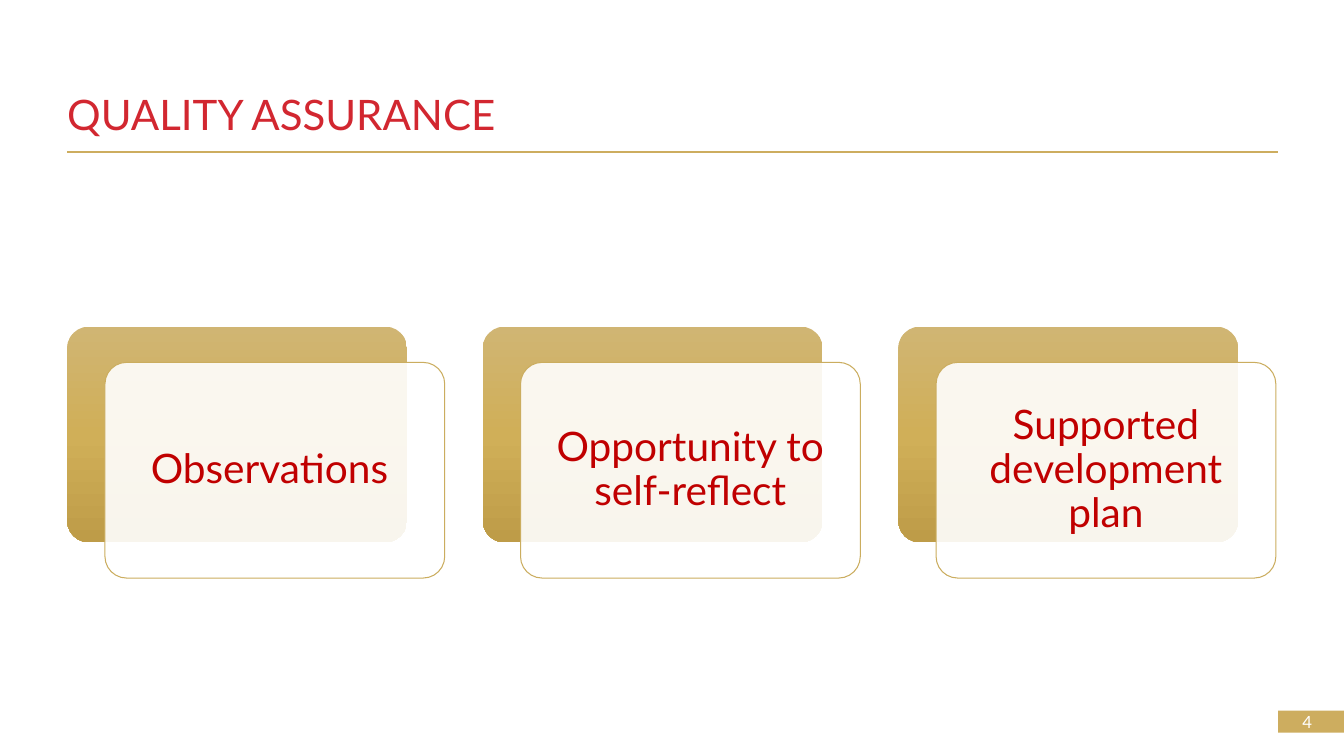
import copy

import pptx
import pptx.dml.color
import pptx.enum.shapes
import pptx.enum.text
import pptx.oxml
import pptx.oxml.ns
import pptx.util

RED = pptx.dml.color.RGBColor(0xD2, 0x27, 0x30)
DEEP_RED = pptx.dml.color.RGBColor(0xC0, 0x00, 0x00)
GOLD = pptx.dml.color.RGBColor(0xCD, 0xAD, 0x5F)
CARD_EDGE = pptx.dml.color.RGBColor(0xCB, 0xAD, 0x5F)
GOLD_LIGHT = pptx.dml.color.RGBColor(0xD0, 0xB5, 0x73)
GOLD_MIDDLE = pptx.dml.color.RGBColor(0xD0, 0xAF, 0x58)
GOLD_DARK = pptx.dml.color.RGBColor(0xBE, 0x9C, 0x48)
WHITE = pptx.dml.color.RGBColor(0xFF, 0xFF, 0xFF)

SHAPE = pptx.enum.shapes.MSO_SHAPE
ALIGN = pptx.enum.text.PP_ALIGN
ANCHOR = pptx.enum.text.MSO_ANCHOR

MARGIN = 5
RULE_END = 95.1
CARD_TOP = 43.2
CARD_SIZE = (25.28, 28.53)
CARD_PITCH = 30.92
FRONT_SHIFT = (2.81, 4.73)
TEXT_PADDING = (0.47, 0.83)
CARDS = ["Observations ", "Opportunity to self-reflect", "Supported development plan"]


def write_text(box, text, size, color, font="Lato", align=ALIGN.LEFT,
               anchor=ANCHOR.MIDDLE, spacing=1.0, insets=(0, 0, 0, 0)):
    frame = box.text_frame
    frame.word_wrap = True
    frame.vertical_anchor = anchor
    (frame.margin_left, frame.margin_top,
     frame.margin_right, frame.margin_bottom) = map(pptx.util.Inches, insets)
    para = frame.paragraphs[0]
    para.alignment = align
    para.line_spacing = spacing
    span = para.add_run()
    span.text = text
    span.font.name = font
    span.font.size = pptx.util.Pt(size)
    span.font.color.rgb = color


class GridPage:
    def __init__(self, deck, columns=100, rows=100):
        self.page = deck.slides.add_slide(deck.slide_layouts[6])
        self.column = deck.slide_width / columns
        self.row = deck.slide_height / rows

    def place(self, *lengths):
        units = (self.column, self.row) * 2
        return [round(length * unit) for length, unit in zip(lengths, units)]

    def rule(self, left, right, row):
        line = self.page.shapes.add_connector(
            pptx.enum.shapes.MSO_CONNECTOR.STRAIGHT, *self.place(left, row, right, row))
        line.line.color.rgb = GOLD
        line.line.width = pptx.util.Pt(1)
        line._element.spPr.append(pptx.oxml.parse_xml(
            f"<a:effectLst {pptx.oxml.ns.nsdecls('a')}/>"))

    def text(self, area, text, size, color, **style):
        box = self.page.shapes.add_textbox(*self.place(*area))
        write_text(box, text, size, color, **style)

    def shape(self, kind, area, color=None):
        box = self.page.shapes.add_shape(kind, *self.place(*area))
        box.shadow.inherit = False
        box.line.fill.background()
        if kind == SHAPE.ROUNDED_RECTANGLE:
            box.adjustments[0] = 0.1
        if color is not None:
            box.fill.solid()
            box.fill.fore_color.rgb = color
        return box

    def gradient_card(self, area):
        card = self.shape(SHAPE.ROUNDED_RECTANGLE, area)
        card.fill.gradient()
        card.fill.gradient_angle = 270
        stop_list = card._element.spPr.find(".//" + pptx.oxml.ns.qn("a:gsLst"))
        stop_list.insert(1, copy.deepcopy(stop_list[0]))
        colors = (GOLD_LIGHT, GOLD_MIDDLE, GOLD_DARK)
        for stop, color, position in zip(card.fill.gradient_stops, colors, (0, 0.5, 1)):
            stop.color.rgb = color
            stop.position = position

    def clear_card(self, area):
        card = self.shape(SHAPE.ROUNDED_RECTANGLE, area, WHITE)
        color = card._element.spPr.find(
            pptx.oxml.ns.qn("a:solidFill") + "/" + pptx.oxml.ns.qn("a:srgbClr"))
        color.append(pptx.oxml.parse_xml(
            f"<a:alpha {pptx.oxml.ns.nsdecls('a')} val='90000'/>"))
        card.line.color.rgb = CARD_EDGE
        card.line.width = pptx.util.Pt(0.75)

    def card(self, left, top, text):
        width, height = CARD_SIZE
        self.gradient_card((left, top, width, height))
        left, top = left + FRONT_SHIFT[0], top + FRONT_SHIFT[1]
        self.clear_card((left, top, width, height))
        across, down = TEXT_PADDING
        self.text((left + across, top + down, width - 2 * across, height - 2 * down),
                  text, 29, DEEP_RED, align=ALIGN.CENTER, spacing=0.9,
                  insets=(0.12, 0.12, 0.12, 0.12))

    def page_number(self, area, number):
        badge = self.shape(SHAPE.RECTANGLE, area, GOLD)
        write_text(badge, number, 12, WHITE, insets=(0.24, 0, 0, 0))


def main():
    deck = pptx.Presentation()
    deck.slide_width = pptx.util.Inches(13.33)
    deck.slide_height = pptx.util.Inches(7.5)
    page = GridPage(deck)
    page.rule(MARGIN, RULE_END, 20.13)
    page.text((MARGIN, 6.67, 79.9, 11.6), "QUALITY ASSURANCE", 30, RED,
              anchor=ANCHOR.BOTTOM, spacing=0.8)
    page.page_number((RULE_END, 94, 100 - RULE_END, 2.93), "4")
    for index, text in enumerate(CARDS):
        page.card(MARGIN + index * CARD_PITCH, CARD_TOP, text)
    deck.save("out.pptx")


if __name__ == "__main__":
    main()
